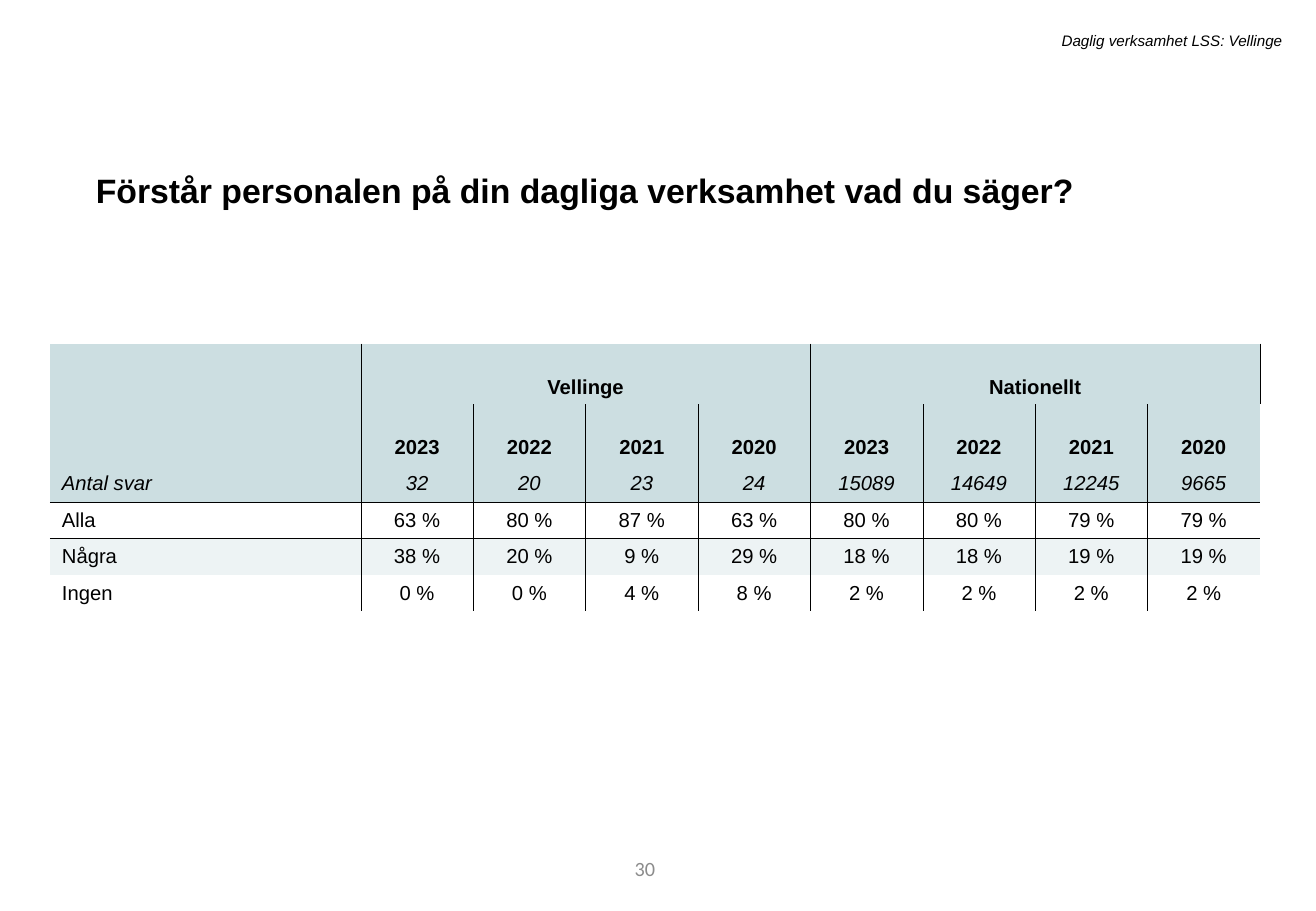
from lxml import etree
from pptx import Presentation
from pptx.dml.color import RGBColor
from pptx.enum import text
from pptx.oxml import ns
from pptx.util import Inches, Pt

COLORS = {"ink": "000000", "muted": "8C8C8C", "header": "CCDEE1", "band": "EDF3F4"}
NO_STYLE = "{2D5ABB26-0587-4C30-8999-92F81FD0307C}"
ALIGN = text.PP_ALIGN
ANCHOR = text.MSO_ANCHOR

YEARS = ["2023", "2022", "2021", "2020"]
ROWS = [
    ["", "Vellinge", "", "", "", "Nationellt", "", "", ""],
    ["", *YEARS, *YEARS],
    ["Antal svar", "32", "20", "23", "24", "15089", "14649", "12245", "9665"],
    ["Alla", "63 %", "80 %", "87 %", "63 %", "80 %", "80 %", "79 %", "79 %"],
    ["Några", "38 %", "20 %", "9 %", "29 %", "18 %", "18 %", "19 %", "19 %"],
    ["Ingen", "0 %", "0 %", "4 %", "8 %", "2 %", "2 %", "2 %", "2 %"],
]
ROW_FILLS = ["header", "header", "header", None, "band", None]
ROW_HEIGHTS = [0.5, 0.5, 0.3, 0.3, 0.3, 0.3]
GROUP_STARTS = (1, 5)
GROUP_SIZE = len(YEARS)
LAST_COLUMN = len(ROWS[0]) - 1
LABEL_WIDTH = 2.56
TABLE_WIDTH = 9.96


class SlideBuilder:
    """Holds the text style and the current slide."""

    def __init__(self, page):
        self.page = page
        self.style = {"name": "Arial", "size": Pt(12), "bold": False, "italic": False}

    def add_words(self, frame, words, align=ALIGN.LEFT, color="ink", **font):
        para = frame.paragraphs[0]
        para.alignment = align
        span = para.add_run()
        span.text = words
        for key, value in {**self.style, **font}.items():
            setattr(span.font, key, value)
        span.font.color.rgb = RGBColor.from_string(COLORS[color])
        return para

    def text_box(self, area, words, anchor=ANCHOR.TOP, **font):
        box = self.page.shapes.add_textbox(*map(Inches, area))
        box.text_frame.word_wrap = True
        box.text_frame.vertical_anchor = anchor
        return self.add_words(box.text_frame, words, **font)

    def borders(self, cell, sides):
        properties = cell._tc.get_or_add_tcPr()
        for side in "LRTB":
            if side in sides:
                line = etree.SubElement(properties, ns.qn(f"a:ln{side}"), w=str(Pt(0.25)))
                fill = etree.SubElement(line, ns.qn("a:solidFill"))
                etree.SubElement(fill, ns.qn("a:srgbClr"), val=COLORS["ink"])

    def table(self, left, top):
        area = (left, top, TABLE_WIDTH, sum(ROW_HEIGHTS))
        frame = self.page.shapes.add_table(len(ROWS), len(ROWS[0]), *map(Inches, area))
        table = frame.table
        table.first_row = table.horz_banding = False
        table._tbl.tblPr.find(ns.qn("a:tableStyleId")).text = NO_STYLE
        value_width = (TABLE_WIDTH - LABEL_WIDTH) / LAST_COLUMN
        for index, column in enumerate(table.columns):
            column.width = Inches(value_width if index else LABEL_WIDTH)
        for row, height in zip(table.rows, ROW_HEIGHTS):
            row.height = Inches(height)
        for start in GROUP_STARTS:
            table.cell(0, start).merge(table.cell(0, start + GROUP_SIZE - 1))
        for row, values in enumerate(ROWS):
            for column, words in enumerate(values):
                cell = table.cell(row, column)
                if not cell.is_spanned:
                    self.table_cell(cell, row, column, words)

    def table_cell(self, cell, row, column, words):
        # Vertical rules between columns, one horizontal rule under the header
        sides = "L" if column else ""
        if row == 0 or column < LAST_COLUMN:
            sides += "R"
        sides += {2: "B", 3: "T"}.get(row, "")
        self.borders(cell, sides)
        if ROW_FILLS[row]:
            cell.fill.solid()
            cell.fill.fore_color.rgb = RGBColor.from_string(COLORS[ROW_FILLS[row]])
        else:
            cell.fill.background()
        cell.vertical_anchor = ANCHOR.BOTTOM if row < 2 else ANCHOR.MIDDLE
        if words:
            align = ALIGN.CENTER if column else ALIGN.LEFT
            self.add_words(cell.text_frame, words, align, bold=row < 2, italic=row == 2)


def main():
    deck = Presentation()
    deck.slide_width, deck.slide_height = Inches(10.83), Inches(7.5)
    slide = SlideBuilder(deck.slides.add_slide(deck.slide_layouts[6]))

    # Page number
    slide.text_box((3.05, 6.95, 2.44, 0.4), "30", ANCHOR.MIDDLE,
                   align=ALIGN.RIGHT, color="muted", name="Calibri")

    # Question
    title = slide.text_box((0.69, 1.28, 9.4, 0.47),
                           "Förstår personalen på din dagliga verksamhet vad du säger?",
                           size=Pt(20), bold=True)
    title.line_spacing = 1.2
    title.space_before = Pt(10)

    # Answers by year
    slide.table(0.41, 2.83)

    # Survey name
    slide.text_box((1.79, 0.21, 8.86, 0.25), "Daglig verksamhet LSS: Vellinge",
                   align=ALIGN.RIGHT, size=Pt(9), italic=True)

    deck.save("out.pptx")


if __name__ == "__main__":
    main()
